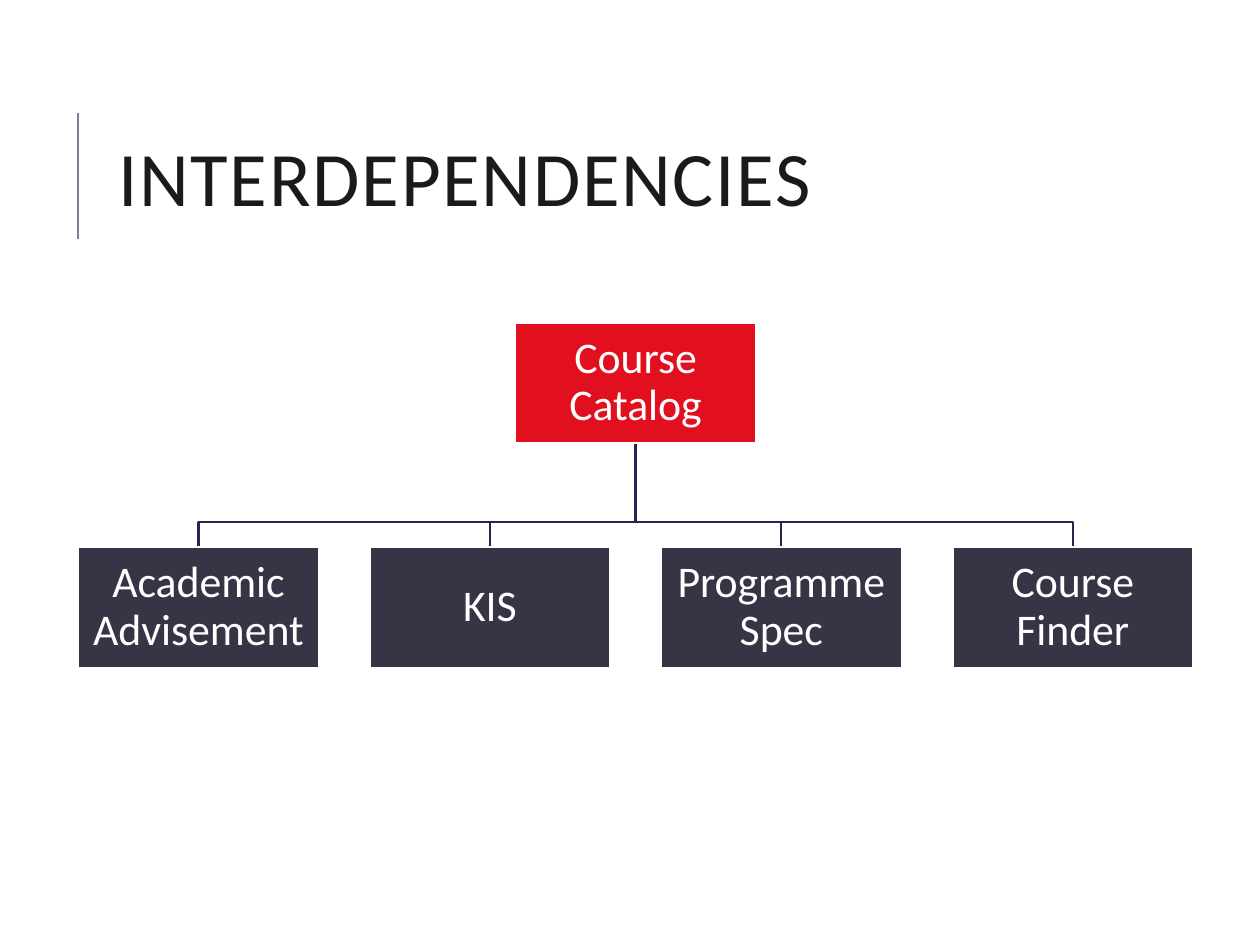
from dataclasses import dataclass

from lxml import etree
from pptx import Presentation
from pptx.dml.color import RGBColor
from pptx.enum import shapes, text
from pptx.oxml import ns
from pptx.slide import Slide
from pptx.text.text import TextFrame
from pptx.util import Inches, Pt


@dataclass(frozen=True)
class Theme:
    font: str = "Calibri"
    title_size: float = 44
    node_size: float = 25
    title_spacing: float = 1
    accent_width: float = 1.5
    line_width: float = 1.25
    ink: str = "1A1A1A"
    white: str = "FFFFFF"
    accent: str = "7F7B99"
    branch: str = "2F2052"
    root: str = "E2101F"
    child: str = "373545"


@dataclass(frozen=True)
class Node:
    label: str
    left: float
    top: float
    fill: str

    @property
    def middle(self) -> float:
        return self.left + NODE_WIDTH / 2


THEME = Theme()
NODE_WIDTH, NODE_HEIGHT = 1.91, 0.96
CHART_LEFT, NODE_STEP = 0.62, 2.313
ROOT_TOP, BUS_TOP, CHILD_TOP = 2.56, 4.14, 4.34
CHILD_LABELS = ["Academic Advisement", "KIS", "Programme Spec", "Course Finder"]


def write(frame: TextFrame, words: str, size: float, colour: str,
          align: text.PP_ALIGN, line_spacing: float, spacing: float = 0) -> None:
    """Fill a frame with one paragraph; spacing is between letters, in points."""
    frame.word_wrap = True
    frame.vertical_anchor = text.MSO_ANCHOR.MIDDLE
    para = frame.paragraphs[0]
    para.alignment = align
    para.line_spacing = line_spacing
    span = para.add_run()
    span.text = words
    for name, value in {"name": THEME.font, "size": Pt(size)}.items():
        setattr(span.font, name, value)
    span.font.color.rgb = RGBColor.from_string(colour)
    if spacing:
        span._r.get_or_add_rPr().set("spc", str(int(spacing * 100)))


def add_title(page: Slide, words: str) -> None:
    rule = page.shapes.add_connector(
        shapes.MSO_CONNECTOR.STRAIGHT,
        Inches(CHART_LEFT), Inches(1.9), Inches(CHART_LEFT), Inches(0.9))
    rule.line.color.rgb = RGBColor.from_string(THEME.accent)
    rule.line.width = Pt(THEME.accent_width)
    etree.SubElement(rule._element.spPr, ns.qn("a:effectLst"))

    box = page.shapes.add_textbox(Inches(0.84), Inches(0.64), Inches(7.97), Inches(1.64))
    write(box.text_frame, words, THEME.title_size, THEME.ink,
          text.PP_ALIGN.LEFT, 0.8, THEME.title_spacing)


def add_branch(page: Slide, parent: Node, child: Node) -> None:
    """Draw the stepped line from a parent's bottom to a child's top."""
    builder = page.shapes.build_freeform(
        Inches(parent.middle), Inches(parent.top + NODE_HEIGHT))
    corners = [(parent.middle, BUS_TOP), (child.middle, BUS_TOP), (child.middle, child.top)]
    builder.add_line_segments([(Inches(x), Inches(y)) for x, y in corners], close=False)
    branch = builder.convert_to_shape()
    branch.shadow.inherit = False
    branch.fill.background()
    branch.line.color.rgb = RGBColor.from_string(THEME.branch)
    branch.line.width = Pt(THEME.line_width)


def add_node(page: Slide, node: Node) -> None:
    box = page.shapes.add_shape(
        shapes.MSO_SHAPE.RECTANGLE, Inches(node.left), Inches(node.top),
        Inches(NODE_WIDTH), Inches(NODE_HEIGHT))
    box.shadow.inherit = False
    box.fill.solid()
    box.fill.fore_color.rgb = RGBColor.from_string(node.fill)
    box.line.color.rgb = RGBColor.from_string(THEME.white)
    box.line.width = Pt(THEME.line_width)
    for side in ("left", "top", "right", "bottom"):
        setattr(box.text_frame, f"margin_{side}", Inches(0.02))
    write(box.text_frame, node.label, THEME.node_size, THEME.white,
          text.PP_ALIGN.CENTER, 0.9)


def main() -> None:
    deck = Presentation()
    deck.slide_width, deck.slide_height = Inches(10), Inches(7.5)
    page = deck.slides.add_slide(deck.slide_layouts[6])

    children = [Node(label, CHART_LEFT + i * NODE_STEP, CHILD_TOP, THEME.child)
                for i, label in enumerate(CHILD_LABELS)]
    root_left = (children[0].left + children[-1].left) / 2
    root = Node("Course Catalog", root_left, ROOT_TOP, THEME.root)

    add_title(page, "INTERDEPENDENCIES")
    for child in reversed(children):
        add_branch(page, root, child)
    for node in [root, *children]:
        add_node(page, node)
    deck.save("out.pptx")


if __name__ == "__main__":
    main()
